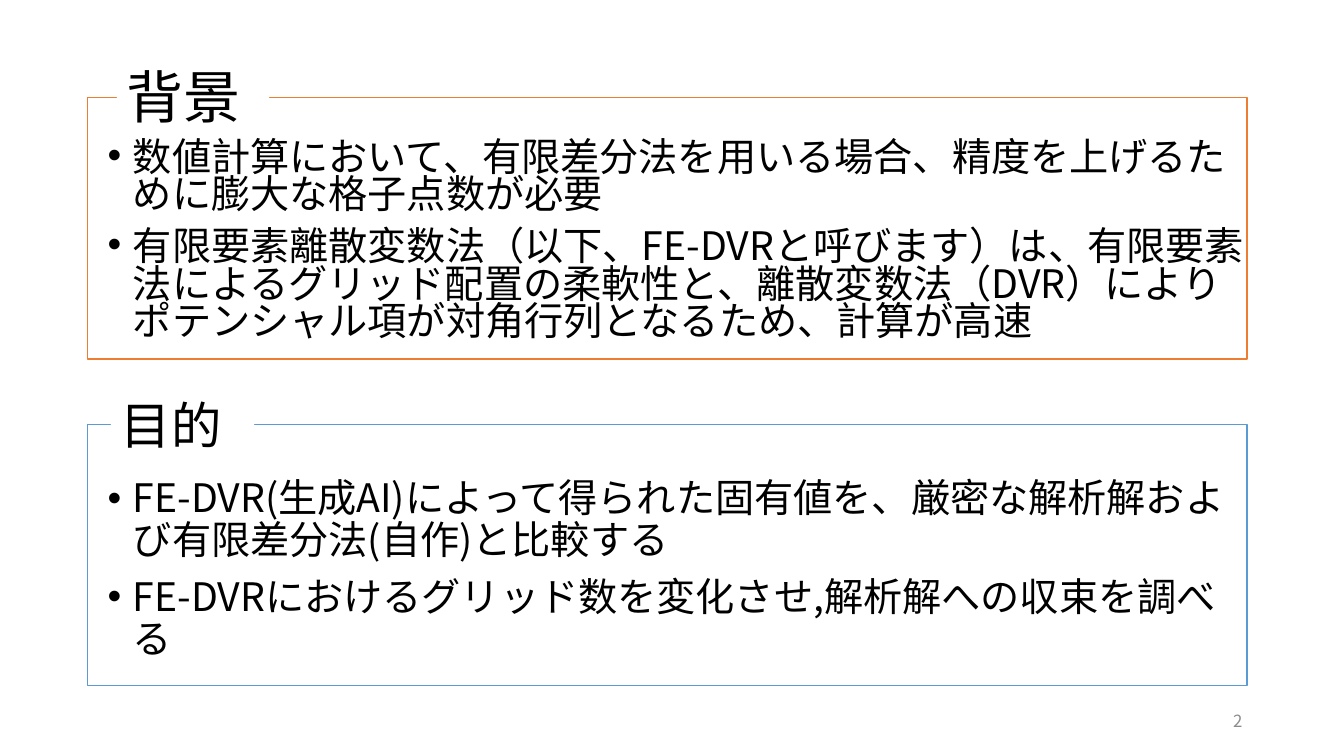
"""Build a slide with framed background and purpose sections."""
from lxml import etree
from pptx import Presentation
from pptx.dml.color import RGBColor
from pptx.enum.shapes import MSO_SHAPE
from pptx.enum.text import MSO_ANCHOR, PP_ALIGN
from pptx.oxml.ns import qn
from pptx.util import Inches, Pt

SECTIONS = [
    {
        "heading": "背景", "heading_size": 40.7, "heading_spacing": 0.7,
        "heading_box": (1.16, 0.7, 1.51, 0.66),
        "frame_top": 0.97, "color": RGBColor(0xED, 0x7D, 0x31),
        "body_box": (0.97, 1.35, 11.6, 2.33), "body_spacing": 0.8,
        "bullets": [
            "数値計算において、有限差分法を用いる場合、精度を上げるために膨大な格子点数が必要",
            "有限要素離散変数法（以下、FE-DVRと呼びます）は、有限要素法によるグリッド配置の柔軟性と、"
            "離散変数法（DVR）によりポテンシャル項が対角行列となるため、計算が高速",
        ],
    },
    {
        "heading": "目的", "heading_size": 36, "heading_spacing": 0.9,
        "heading_box": (1.1, 4, 1.42, 0.49),
        "frame_top": 4.21, "color": RGBColor(0x5B, 0x9B, 0xD5),
        "body_box": (0.97, 4.7, 11.29, 2.1), "body_spacing": 0.9,
        "bullets": [
            "FE-DVR(生成AI)によって得られた固有値を、厳密な解析解および有限差分法(自作)と比較する",
            "FE-DVRにおけるグリッド数を変化させ,解析解への収束を調べる",
        ],
    },
]
PAGE_NUMBER = "2"
PAGE_NUMBER_BOX = (9.42, 6.95, 3, 0.4)
FRAME_LEFT, FRAME_WIDTH, FRAME_HEIGHT = 0.87, 11.5, 2.59
BODY_SIZE, BULLET_INDENT, BULLET_GAP = 28, 0.25, 10

FONT = "Noto Sans CJK JP"
BLACK = RGBColor(0x00, 0x00, 0x00)
WHITE = RGBColor(0xFF, 0xFF, 0xFF)
GRAY = RGBColor(0x8C, 0x8C, 0x8C)
RECTANGLE = MSO_SHAPE.RECTANGLE
MIDDLE, TOP = MSO_ANCHOR.MIDDLE, MSO_ANCHOR.TOP
LEFT, RIGHT = PP_ALIGN.LEFT, PP_ALIGN.RIGHT


def add_rectangle(slide, box):
    shape = slide.shapes.add_shape(RECTANGLE, *map(Inches, box))
    shape.shadow.inherit = False
    return shape


def add_bullet(paragraph):
    properties = paragraph._p.get_or_add_pPr()
    properties.set("marL", str(Inches(BULLET_INDENT)))
    properties.set("indent", str(-Inches(BULLET_INDENT)))
    etree.SubElement(properties, qn("a:buFont")).set("typeface", "Arial")
    etree.SubElement(properties, qn("a:buChar")).set("char", "•")


def write_text(shape, lines, size, color=BLACK, spacing=1.0,
               align=LEFT, anchor=MIDDLE, bulleted=False):
    frame = shape.text_frame
    frame.word_wrap = True
    frame.vertical_anchor = anchor
    for index, line in enumerate(lines):
        paragraph = frame.add_paragraph() if index else frame.paragraphs[0]
        paragraph.text = line
        if bulleted:
            add_bullet(paragraph)
        paragraph.alignment = align
        paragraph.line_spacing = spacing
        if index:
            paragraph.space_before = Pt(BULLET_GAP)
        font = paragraph.font
        font.size = Pt(size)
        font.color.rgb = color
        font.name = FONT
        etree.SubElement(font._element, qn("a:ea")).set("typeface", FONT)


def add_section(slide, section):
    body = slide.shapes.add_textbox(*map(Inches, section["body_box"]))
    write_text(body, section["bullets"], BODY_SIZE,
               spacing=section["body_spacing"], anchor=TOP, bulleted=True)

    frame = add_rectangle(
        slide, (FRAME_LEFT, section["frame_top"], FRAME_WIDTH, FRAME_HEIGHT))
    frame.fill.background()
    frame.line.color.rgb = section["color"]
    frame.line.width = Pt(1)

    heading = add_rectangle(slide, section["heading_box"])
    heading.fill.solid()
    heading.fill.fore_color.rgb = WHITE
    heading.line.fill.background()
    write_text(heading, [section["heading"]], section["heading_size"],
               spacing=section["heading_spacing"])


def main():
    presentation = Presentation()
    presentation.slide_width = Inches(13.33)
    presentation.slide_height = Inches(7.5)
    slide = presentation.slides.add_slide(presentation.slide_layouts[6])
    for section in SECTIONS:
        add_section(slide, section)
    number = slide.shapes.add_textbox(*map(Inches, PAGE_NUMBER_BOX))
    write_text(number, [PAGE_NUMBER], 12, color=GRAY, align=RIGHT)
    presentation.save("out.pptx")


if __name__ == "__main__":
    main()
